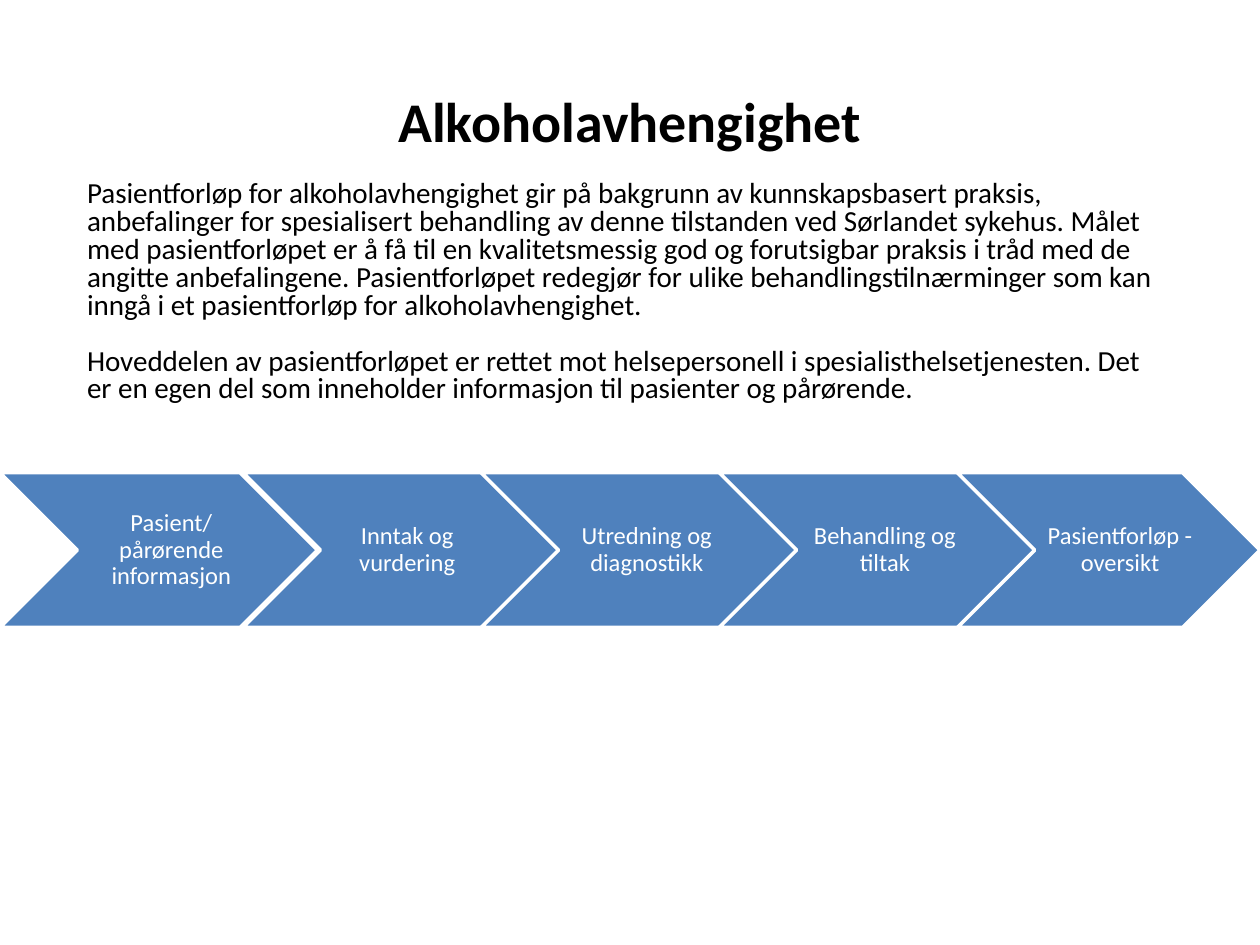
from dataclasses import dataclass

from pptx import Presentation
from pptx.dml.color import RGBColor
from pptx.enum.shapes import MSO_SHAPE as Preset
from pptx.enum.text import MSO_ANCHOR as Anchor, MSO_AUTO_SIZE as AutoSize, PP_ALIGN as Align
from pptx.util import Cm, Pt


@dataclass(frozen=True)
class Theme:
    font: str = "Calibri"
    ink: RGBColor = RGBColor(0x00, 0x00, 0x00)
    paper: RGBColor = RGBColor(0xFF, 0xFF, 0xFF)
    accent: RGBColor = RGBColor(0x4F, 0x81, 0xBD)
    title_size: float = 32
    body_size: float = 16.6
    step_size: float = 14
    outline: float = 2


@dataclass(frozen=True)
class Box:
    left: float
    top: float
    width: float
    height: float

    def lengths(self):
        return Cm(self.left), Cm(self.top), Cm(self.width), Cm(self.height)


@dataclass(frozen=True)
class Step:
    label: str
    width: float
    label_inset: float
    label_width: float


THEME = Theme()
TITLE = "Alkoholavhengighet"
INTRODUCTION = [
    "Pasientforløp for alkoholavhengighet gir på bakgrunn av kunnskapsbasert praksis, "
    "anbefalinger for spesialisert behandling av denne tilstanden ved Sørlandet sykehus. "
    "Målet med pasientforløpet er å få til en kvalitetsmessig god og forutsigbar praksis "
    "i tråd med de angitte anbefalingene. Pasientforløpet redegjør for ulike "
    "behandlingstilnærminger som kan inngå i et pasientforløp for alkoholavhengighet.",
    "Hoveddelen av pasientforløpet er rettet mot helsepersonell i spesialisthelsetjenesten. "
    "Det er en egen del som inneholder informasjon til pasienter og pårørende.",
]
STEPS = [
    Step("Pasient/ pårørende informasjon", 6.4, 1.7, 3.43),
    Step("Inntak og vurdering", 6.6, 1.35, 3.84),
    Step("Utredning og diagnostikk", 6.4, 1.6, 3.4),
    Step("Behandling og tiltak", 6.6, 1.32, 3.96),
    Step("Pasientforløp - oversikt", 6.1, 1.6, 3.28),
]
STEP_PITCH = 4.8
FIRST_GAP = 0.1


def place(shape, box):
    shape.left, shape.top, shape.width, shape.height = box.lengths()


def style_text(frame, size, color, align, bold=False, line_spacing=1.0):
    frame.word_wrap = True
    frame.auto_size = AutoSize.NONE
    for para in frame.paragraphs:
        para.alignment = align
        para.line_spacing = line_spacing
        para.space_before = Pt(0)
        for span in para.runs:
            span.font.name = THEME.font
            span.font.size = Pt(size)
            span.font.bold = bold
            span.font.color.rgb = color


def fill_title(title, box):
    place(title, box)
    frame = title.text_frame
    frame.text = TITLE
    frame.vertical_anchor = Anchor.MIDDLE
    style_text(frame, THEME.title_size, THEME.ink, Align.CENTER, bold=True)


def fill_introduction(body, box):
    place(body, box)
    frame = body.text_frame
    frame.text = "\n".join(INTRODUCTION)
    frame.vertical_anchor = Anchor.TOP
    style_text(frame, THEME.body_size, THEME.ink, Align.LEFT, line_spacing=0.8)
    for para in frame.paragraphs[1:]:
        para.space_before = Pt(16)


def add_step(page, step, box):
    group = page.shapes.add_group_shape()
    chevron = group.shapes.add_shape(Preset.CHEVRON, *box.lengths())
    chevron.shadow.inherit = False
    chevron.fill.solid()
    chevron.fill.fore_color.rgb = THEME.accent
    chevron.line.color.rgb = THEME.paper
    chevron.line.width = Pt(THEME.outline)

    label_box = Box(box.left + step.label_inset, box.top, step.label_width, box.height)
    label = group.shapes.add_textbox(*label_box.lengths())
    frame = label.text_frame
    frame.text = step.label
    frame.vertical_anchor = Anchor.MIDDLE
    frame.margin_left = Cm(0.13)
    frame.margin_top = frame.margin_right = frame.margin_bottom = Cm(0.05)
    style_text(frame, THEME.step_size, THEME.paper, Align.CENTER, line_spacing=0.9)


def add_process(page, box):
    for index, step in enumerate(STEPS):
        offset = index * STEP_PITCH + (FIRST_GAP if index else 0)
        add_step(page, step, Box(box.left + offset, box.top, step.width, box.height))


def main():
    deck = Presentation()
    deck.slide_width, deck.slide_height = Cm(25.4), Cm(19.05)
    page = deck.slides.add_slide(deck.slide_layouts[0])
    fill_title(page.shapes.title, Box(1.9, 0.53, 21.6, 3.8))
    add_process(page, Box(0, 9.53, 25.4, 3.12))
    fill_introduction(page.placeholders[1], Box(1.5, 3.53, 22.2, 5.2))
    deck.save("out.pptx")


if __name__ == "__main__":
    main()
